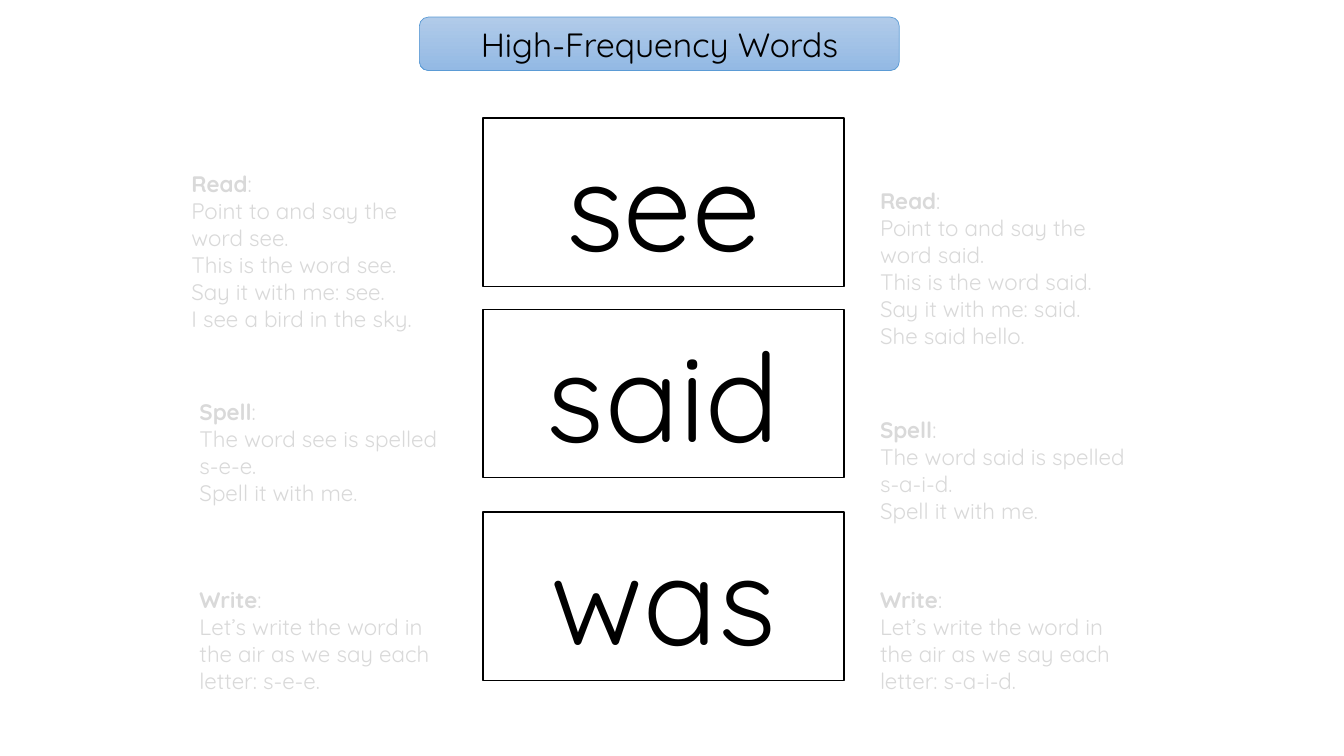
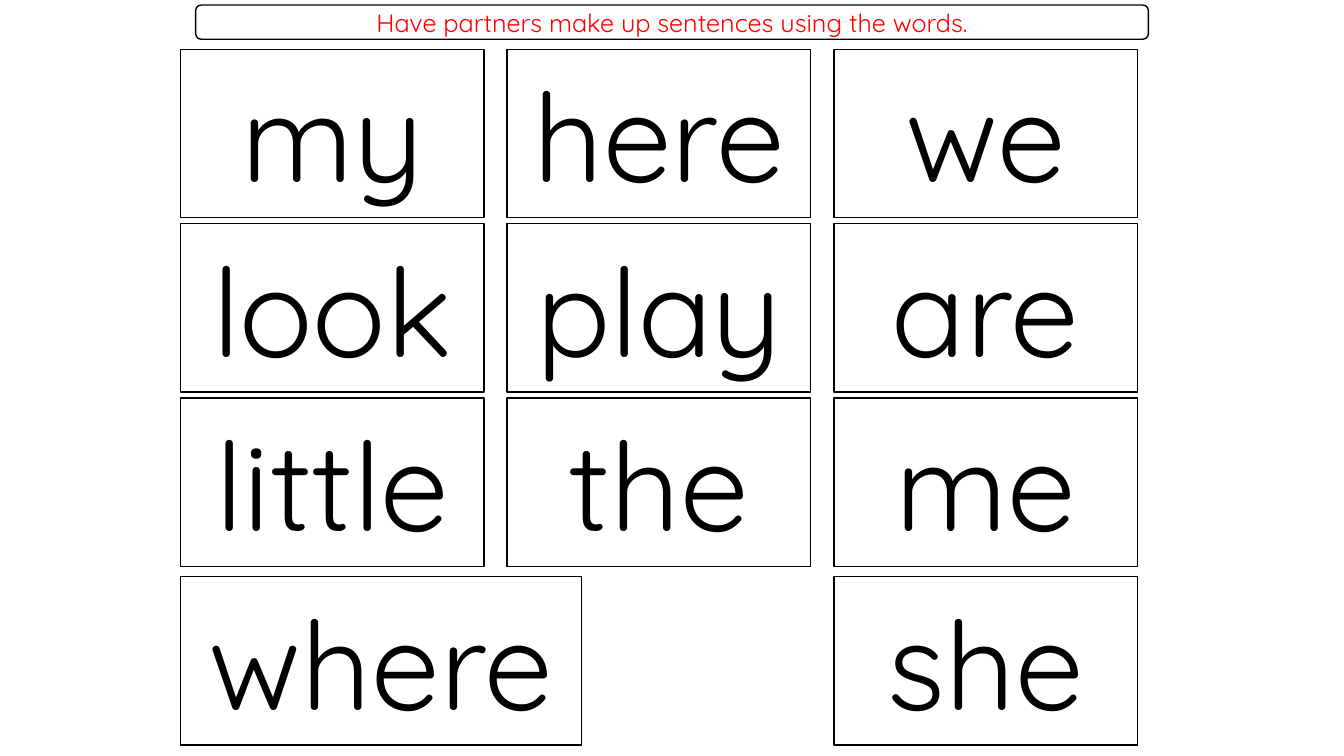
from pptx import Presentation
from pptx.dml.color import RGBColor
from pptx.enum.shapes import MSO_SHAPE
from pptx.enum.text import MSO_ANCHOR, MSO_AUTO_SIZE, PP_ALIGN
from pptx.util import Inches, Pt

RECT, ROUND = MSO_SHAPE.RECTANGLE, MSO_SHAPE.ROUNDED_RECTANGLE
LEFT, CENTER = PP_ALIGN.LEFT, PP_ALIGN.CENTER
TOP, MIDDLE = MSO_ANCHOR.TOP, MSO_ANCHOR.MIDDLE
FIXED, GROW = MSO_AUTO_SIZE.NONE, MSO_AUTO_SIZE.SHAPE_TO_FIT_TEXT

FONT = "Quicksand"
BLACK, WHITE, RED, GRAY, BLUE = "000000", "FFFFFF", "FF0000", "D9D9D9", "5B9BD5"
SKY = ("B1CBE9", "93B9E4")
CARD_H = 1.67

WORDS = ("see", "said", "was")
WORD_TOPS = (1.17, 3.07, 5.08)
COACH = (
    ("see", "I see a bird in the sky.",
     ["The word see is spelled", "s-e-e."],
     ((1.8, 1.64), (1.88, 3.9), (1.88, 5.77))),
    ("said", "She said hello.",
     ["The word said is spelled s-a-i-d."],
     ((8.63, 1.81), (8.63, 4.08), (8.63, 5.77))),
)
GRID = (
    ("my", "here", "we"),
    ("look", "play", "are"),
    ("little", "the", "me"),
    ("where", None, "she"),
)
GRID_TOPS = (0.49, 2.22, 3.95, 5.72)
GRID_LEFT, GRID_STEP, GRID_W = 1.79, 3.24, 3.01
WIDE = {"where": 3.98}


def rgb(code):
    """Turn a hex string into a colour."""
    return RGBColor.from_string(code)


def write(shape, lines, size=16, color=BLACK, align=CENTER, anchor=MIDDLE,
          fit=FIXED, inset=None, head=None):
    """Fill a shape with formatted lines under an optional bold heading."""
    frame = shape.text_frame
    frame.word_wrap = True
    frame.auto_size = fit
    frame.vertical_anchor = anchor
    if inset is not None:
        frame.margin_left = frame.margin_right = Inches(inset)
        frame.margin_top = frame.margin_bottom = Inches(inset)
    rows = [[(line, False)] for line in lines]
    if head:
        rows.insert(0, [(head, True), (":", False)])
    for i, row in enumerate(rows):
        para = frame.add_paragraph() if i else frame.paragraphs[0]
        para.alignment = align
        for text, bold in row:
            run = para.add_run()
            run.text = text
            font = run.font
            font.name, font.size, font.bold = FONT, Pt(size), bold
            font.color.rgb = rgb(color)


def panel(slide, box, kind=RECT, fill=(WHITE,), line=BLACK, width=1):
    """Draw an outlined shape with a plain or two-colour fill."""
    shape = slide.shapes.add_shape(kind, *map(Inches, box))
    shape.shadow.inherit = False
    if len(fill) == 1:
        shape.fill.solid()
        shape.fill.fore_color.rgb = rgb(fill[0])
    else:
        shape.fill.gradient()
        shape.fill.gradient_angle = 270
        for stop, code in zip(shape.fill.gradient_stops, fill):
            stop.color.rgb = rgb(code)
    shape.line.color.rgb = rgb(line)
    shape.line.width = Pt(width)
    return shape


def banner(slide, box, text, size, color=BLACK, **style):
    """Set the slide title on a rounded band."""
    panel(slide, box, ROUND, **style)
    title = slide.shapes.title
    title.left, title.top, title.width, title.height = map(Inches, box)
    title.element.getparent().append(title.element)
    write(title, [text], size=size, color=color, inset=0)


def card(slide, box, word):
    """Draw a word card."""
    write(panel(slide, box), [word], size=88)


def note(slide, box, head, lines):
    """Place a pale teaching note with a bold heading."""
    shape = slide.shapes.add_textbox(*map(Inches, box))
    write(shape, lines, color=GRAY, align=LEFT, anchor=TOP, fit=GROW, head=head)


def coach(slide, word, usage, spell, spots):
    """Place the read, spell and write notes for a word."""
    letters = "-".join(word)
    parts = (
        ("Read", 1.72, [f"Point to and say the word {word}.",
                        f"This is the word {word}.",
                        f"Say it with me: {word}.", usage]),
        ("Spell", 1.18, spell + ["Spell it with me."]),
        ("Write", 1.18, ["Let’s write the word in the air as we say each "
                         f"letter: {letters}."]),
    )
    for (x, y), (head, high, lines) in zip(spots, parts):
        note(slide, (x, y, 2.78, high), head, lines)


def lesson(slide):
    """Build the slide of new words."""
    banner(slide, (4.16, 0.17, 4.76, 0.53), "High-Frequency Words", 24,
           fill=SKY, line=BLUE, width=0.5)
    for word, y in zip(WORDS, WORD_TOPS):
        card(slide, (4.79, y, 3.58, CARD_H), word)
    for entry in COACH:
        coach(slide, *entry)


def review(slide):
    """Build the slide of review words."""
    banner(slide, (1.94, 0.05, 9.45, 0.34),
           "Have partners make up sentences using the words.", 18, RED)
    for y, row in zip(GRID_TOPS, GRID):
        for col, word in enumerate(row):
            if word:
                x = GRID_LEFT + col * GRID_STEP
                card(slide, (x, y, WIDE.get(word, GRID_W), CARD_H), word)


def main():
    """Build and save the deck."""
    deck = Presentation()
    deck.slide_width, deck.slide_height = Inches(13.33), Inches(7.5)
    for build in (lesson, review):
        build(deck.slides.add_slide(deck.slide_layouts[5]))
    deck.save("out.pptx")


if __name__ == "__main__":
    main()
